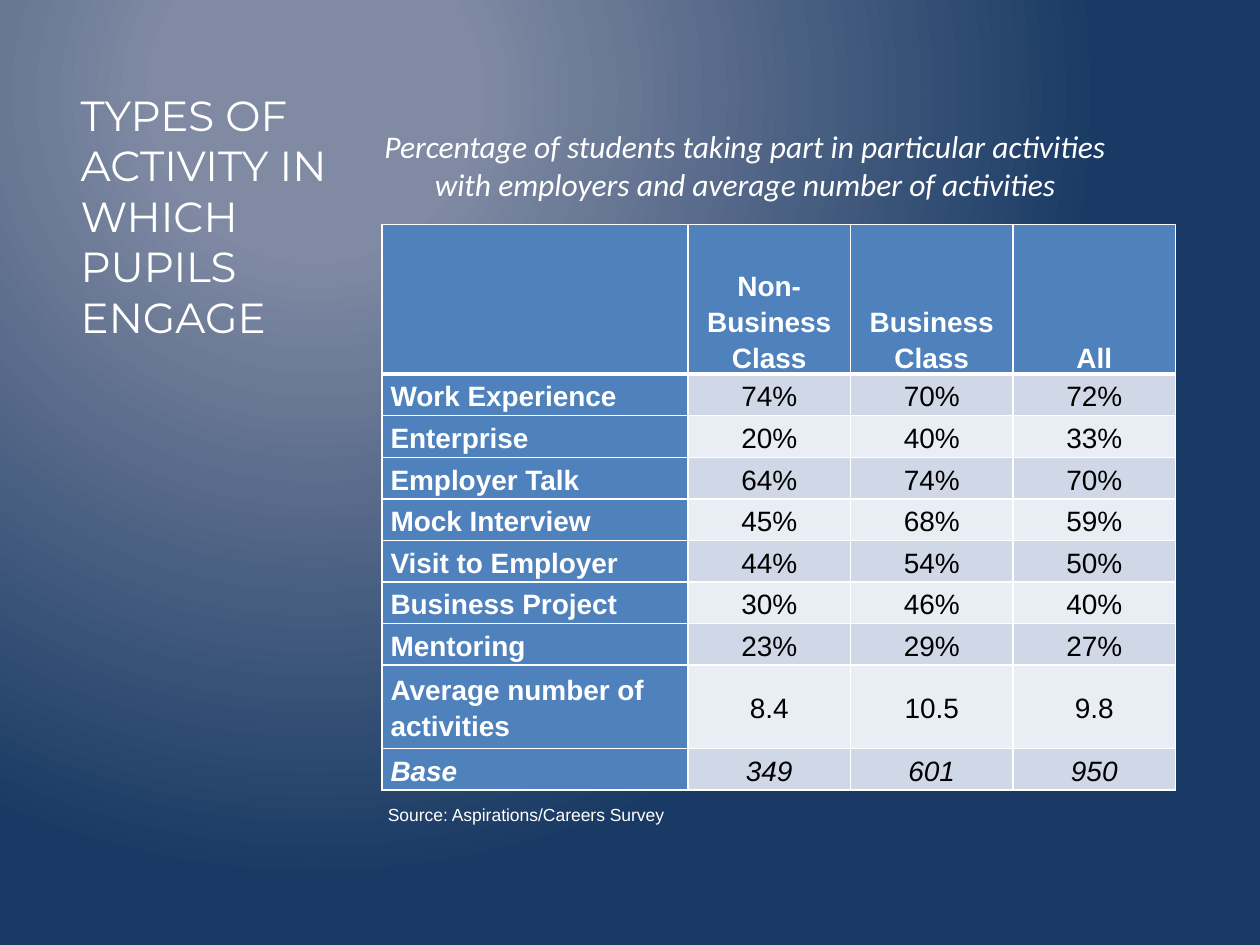
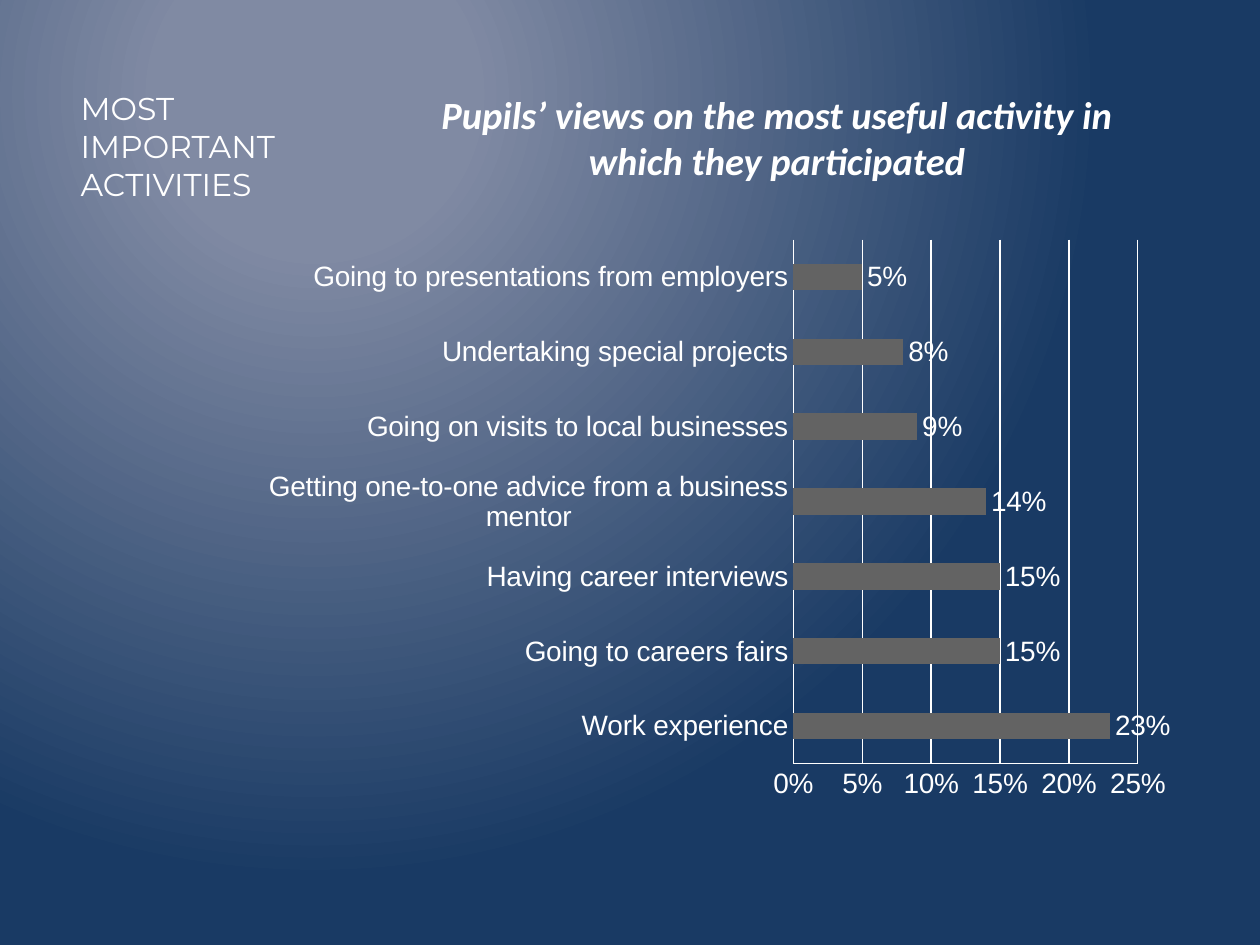
from pptx import Presentation
from pptx.chart.data import CategoryChartData as ChartData
from pptx.dml.color import RGBColor
from pptx.enum.chart import XL_CHART_TYPE as ChartType
from pptx.enum.chart import XL_LABEL_POSITION as LabelPosition
from pptx.enum.chart import XL_TICK_MARK as TickMark
from pptx.enum.text import MSO_ANCHOR as Anchor
from pptx.enum.text import MSO_AUTO_SIZE as AutoSize
from pptx.enum.text import PP_ALIGN as Align
from pptx.oxml import parse_xml
from pptx.oxml.ns import nsdecls, qn
from pptx.util import Inches, Pt

COLORS = {
    "glow": "808AA3",
    "navy": "193A64",
    "text": "FFFFFF",
    "header": "4F81BD",
    "band_dark": "D0D8E8",
    "band_light": "E9EDF4",
    "value": "000000",
    "bar": "636363",
}
FONTS = {"title": "Montserrat", "heading": "Calibri", "body": "Arial"}

ACTIVITY_ROWS = [
    ("", "Non-Business Class", "Business Class", "All"),
    ("Work Experience", "74%", "70%", "72%"),
    ("Enterprise", "20%", "40%", "33%"),
    ("Employer Talk", "64%", "74%", "70%"),
    ("Mock Interview", "45%", "68%", "59%"),
    ("Visit to Employer", "44%", "54%", "50%"),
    ("Business Project", "30%", "46%", "40%"),
    ("Mentoring", "23%", "29%", "27%"),
    ("Average number of activities", "8.4", "10.5", "9.8"),
    ("Base", "349", "601", "950"),
]
USEFUL_ACTIVITIES = {
    "Work experience": 0.23,
    "Going to careers fairs": 0.15,
    "Having career interviews": 0.15,
    "Getting one-to-one advice from a business mentor": 0.14,
    "Going on visits to local businesses": 0.09,
    "Undertaking special projects": 0.08,
    "Going to presentations from employers": 0.05,
}


def rgb(name):
    """Return the named colour."""
    return RGBColor.from_string(COLORS[name])


def set_all(target, values):
    """Set every attribute given in a dict."""
    for name, value in values.items():
        setattr(target, name, value)


def box(left, top, width, height):
    """Return a position and size in inches."""
    return [Inches(length) for length in (left, top, width, height)]


class Deck:
    """Holds the shared style and the current slide."""

    def __init__(self):
        """Start a presentation with the shared background."""
        self.presentation = Presentation()
        self.presentation.slide_width = Inches(10)
        self.presentation.slide_height = Inches(7.5)
        self.slide = None
        self.paint_background()

    def paint_background(self):
        """Give the master a circular glow."""
        master = self.presentation.slide_master
        fill = master.background.fill
        fill.gradient()
        for stop, position, name in zip(fill.gradient_stops, (0.2, 1), ("glow", "navy")):
            stop.position = position
            stop.color.rgb = rgb(name)
        gradient = master.element.find(".//" + qn("a:gradFill"))
        linear = gradient.find(qn("a:lin"))
        gradient.replace(linear, parse_xml(
            f'<a:path {nsdecls("a")} path="circle">'
            '<a:fillToRect l="50000" t="20000" r="100000" b="100000"/></a:path>'))

    def style_font(self, font, family, size, color="text", **extra):
        """Apply a family, size, colour and extras to a font."""
        set_all(font, {"name": FONTS[family], "size": Pt(size), **extra})
        font.color.rgb = rgb(color)

    def add_text(self, frame, text, font, align=Align.LEFT, **paragraph_format):
        """Put one styled paragraph into a text frame."""
        paragraph = frame.paragraphs[0]
        set_all(paragraph, {"alignment": align, **paragraph_format})
        run = paragraph.add_run()
        run.text = text
        self.style_font(run.font, **font)
        return paragraph

    def add_slide(self, title, size):
        """Add a slide with its title at the upper left."""
        layout = self.presentation.slide_layouts[5]
        self.slide = self.presentation.slides.add_slide(layout)
        shape = self.slide.shapes.title
        position = box(0.54, 0.66, 2.27, 2.17)
        set_all(shape, dict(zip(("left", "top", "width", "height"), position)))
        frame = shape.text_frame
        set_all(frame, {"vertical_anchor": Anchor.TOP, "word_wrap": True,
                        "auto_size": AutoSize.NONE})
        self.add_text(frame, title, {"family": "title", "size": size})

    def add_heading(self, position, text, size, anchor=Anchor.TOP, bold=False):
        """Add a centred italic heading."""
        frame = self.slide.shapes.add_textbox(*position).text_frame
        set_all(frame, {"word_wrap": True, "vertical_anchor": anchor})
        font = {"family": "heading", "size": size, "italic": True, "bold": bold}
        self.add_text(frame, text, font, Align.CENTER)

    def add_source(self, position, text):
        """Add a small source line with a first-line indent."""
        frame = self.slide.shapes.add_textbox(*position).text_frame
        set_all(frame, {"word_wrap": False, "auto_size": AutoSize.SHAPE_TO_FIT_TEXT})
        paragraph = self.add_text(frame, text, {"family": "body", "size": 10})
        paragraph._p.get_or_add_pPr().set("indent", str(Inches(0.5)))

    def add_borders(self, cell, row):
        """Draw white cell borders, thicker under the header."""
        widths = {"L": 1, "R": 1, "T": 3 if row == 1 else 1, "B": 3 if row == 0 else 1}
        for side, width in widths.items():
            cell._tc.get_or_add_tcPr().append(parse_xml(
                f'<a:ln{side} {nsdecls("a")} w="{Pt(width)}"><a:solidFill>'
                f'<a:srgbClr val="{COLORS["text"]}"/></a:solidFill></a:ln{side}>'))

    def fill_cell(self, cell, text, row, column, last_row):
        """Format one table cell and set its text."""
        is_header = row == 0
        is_label = is_header or column == 0
        band = "band_dark" if row % 2 else "band_light"
        self.add_borders(cell, row)
        cell.fill.solid()
        cell.fill.fore_color.rgb = rgb("header" if is_label else band)
        set_all(cell, {
            "margin_left": Inches(0.07), "margin_right": Inches(0.07),
            "margin_top": 0, "margin_bottom": 0,
            "vertical_anchor": Anchor.BOTTOM if is_header else Anchor.MIDDLE,
        })
        if text:
            font = {"family": "body", "size": 16, "bold": is_label,
                    "italic": row == last_row, "color": "text" if is_label else "value"}
            self.add_text(cell.text_frame, text, font,
                          Align.CENTER if column else Align.LEFT,
                          line_spacing=1.15, space_before=Pt(6 if is_header else 0))

    def add_table(self, position, rows, widths, heights):
        """Add a banded table with a header row and a label column."""
        frame = self.slide.shapes.add_table(len(rows), len(widths), *position)
        table = frame.table
        set_all(table, {"first_row": False, "horz_banding": False})
        for column, width in zip(table.columns, widths):
            column.width = Inches(width)
        for row, height in zip(table.rows, heights):
            row.height = Inches(height)
        for row, texts in enumerate(rows):
            for column, text in enumerate(texts):
                self.fill_cell(table.cell(row, column), text, row, column, len(rows) - 1)

    def style_axis(self, axis):
        """Give an axis a white line and no tick marks."""
        set_all(axis, {"major_tick_mark": TickMark.NONE, "minor_tick_mark": TickMark.NONE})
        self.style_line(axis.format.line)

    def style_line(self, line):
        """Make a chart line thin and white."""
        line.color.rgb = rgb("text")
        line.width = Pt(0.75)

    def add_bar_chart(self, position, values):
        """Add a horizontal bar chart of percentages."""
        data = ChartData(number_format="0%")
        data.categories = list(values)
        data.add_series("Series 1", list(values.values()))
        frame = self.slide.shapes.add_chart(ChartType.BAR_CLUSTERED, *position, data)
        chart = frame.chart
        set_all(chart, {"has_legend": False, "has_title": False})
        self.style_font(chart.font, "body", 16)
        self.style_axis(chart.category_axis)
        value_axis = chart.value_axis
        self.style_axis(value_axis)
        set_all(value_axis, {"minimum_scale": 0, "maximum_scale": 0.25,
                             "major_unit": 0.05, "has_major_gridlines": True})
        self.style_line(value_axis.major_gridlines.format.line)
        number_format = {"number_format": "0%", "number_format_is_linked": False}
        set_all(value_axis.tick_labels, number_format)
        plot = chart.plots[0]
        set_all(plot, {"gap_width": 182, "vary_by_categories": False,
                       "has_data_labels": True})
        set_all(plot.data_labels, {**number_format, "show_value": True,
                                   "position": LabelPosition.OUTSIDE_END})
        self.style_font(plot.data_labels.font, "body", 16)
        fill = plot.series[0].format.fill
        fill.solid()
        fill.fore_color.rgb = rgb("bar")
        self.place_plot(chart, x=0.58, y=0.02, w=0.37, h=0.9)

    def place_plot(self, chart, **fractions):
        """Fix the inner plot area as fractions of the chart."""
        plot_area = chart._chartSpace.find(".//" + qn("c:plotArea"))
        for layout in plot_area.findall(qn("c:layout")):
            plot_area.remove(layout)
        modes = "".join(f'<c:{side}Mode val="edge"/>' for side in "xy")
        sizes = "".join(f'<c:{side} val="{value}"/>' for side, value in fractions.items())
        plot_area.insert(0, parse_xml(
            f'<c:layout {nsdecls("c")}><c:manualLayout><c:layoutTarget val="inner"/>'
            f"{modes}{sizes}</c:manualLayout></c:layout>"))


def main():
    """Build both slides and save them."""
    deck = Deck()

    deck.add_slide("TYPES OF ACTIVITY IN WHICH PUPILS ENGAGE", 24)
    deck.add_table(box(3.03, 1.78, 6.3, 4.49), ACTIVITY_ROWS,
                   [2.43] + [1.29] * 3, [1.19] + [0.33] * 7 + [0.66, 0.33])
    deck.add_heading(box(2.81, 0.66, 6.21, 1),
                     "Percentage of students taking part in particular activities "
                     "with employers and average number of activities",
                     18, Anchor.BOTTOM)
    deck.add_source(box(2.48, 6.33, 2.96, 0.27), "Source: Aspirations/Careers Survey")

    deck.add_slide("MOST IMPORTANT ACTIVITIES", 18)
    deck.add_heading(box(3.24, 0.67, 5.85, 0.99),
                     "Pupils’ views on the most useful activity in which they participated",
                     22, bold=True)
    deck.add_bar_chart(box(2.01, 1.81, 7.39, 4.62), USEFUL_ACTIVITIES)

    deck.presentation.save("out.pptx")


if __name__ == "__main__":
    main()
